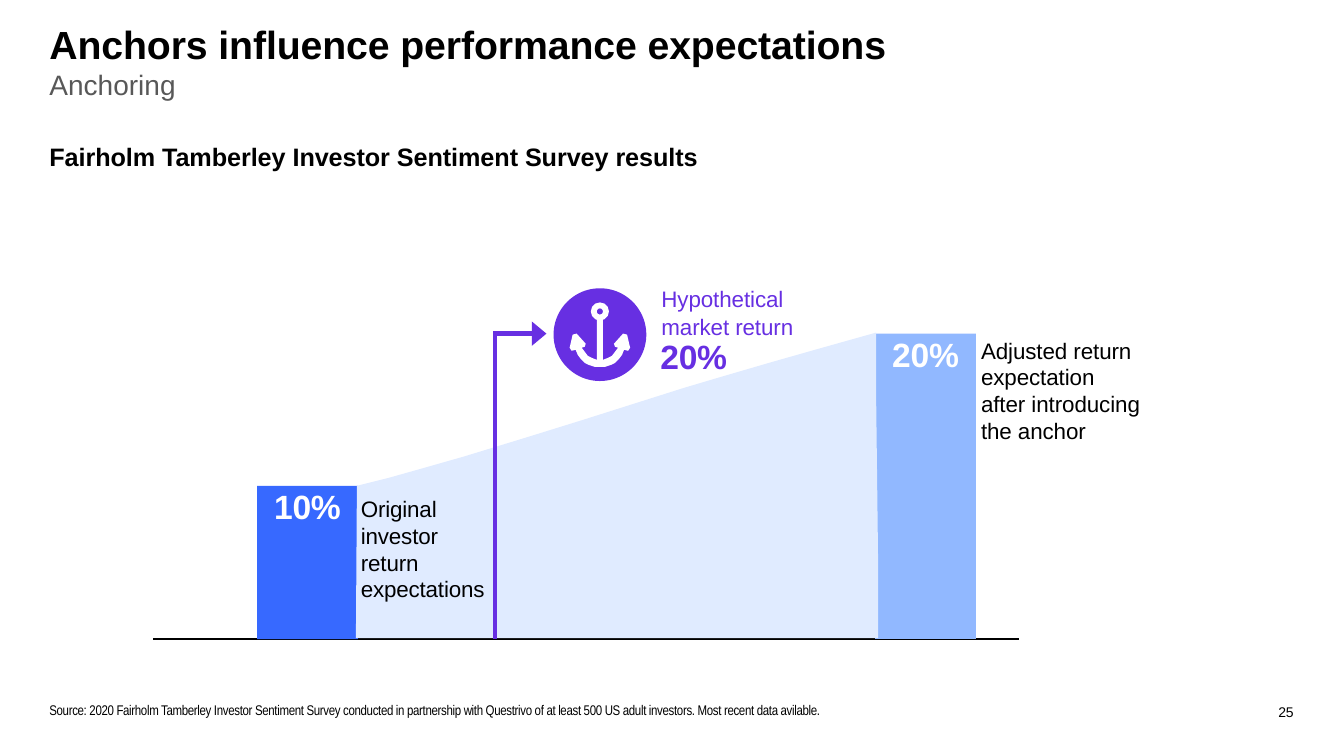
from dataclasses import dataclass

from lxml.etree import SubElement
from pptx import Presentation
from pptx.dml.color import RGBColor
from pptx.enum.shapes import MSO_CONNECTOR, MSO_SHAPE
from pptx.enum.text import MSO_ANCHOR, MSO_AUTO_SIZE, PP_ALIGN
from pptx.oxml.ns import qn
from pptx.util import Inches, Pt

BLACK, WHITE, GREY, PURPLE = "000000", "FFFFFF", "585858", "672FE2"
BASELINE = 6.34


@dataclass
class Bar:
    value: str
    left: float
    top: float
    color: str
    width: float = 1.0


@dataclass
class Label:
    lines: tuple[str, ...]
    left: float
    top: float
    width: float
    height: float
    size: float = 16
    color: str = BLACK
    bold: bool = False
    font: str = "Arial"
    tracking: float = 0
    line_spacing: float = 1.0


BARS = [
    Bar("20%", 8.68, 3.31, "91B8FF"),
    Bar("10%", 2.55, 4.82, "3769FF"),
]

LABELS = [
    Label(("Fairholm Tamberley Investor Sentiment Survey results",),
          0.49, 1.39, 6.6, 0.33, size=18, bold=True, tracking=-0.05),
    Label(("Adjusted return", "expectation", "after introducing", "the anchor"),
          9.73, 3.33, 1.75, 1.09, tracking=-0.07),
    Label(("Original", "investor", "return", "expectations"),
          3.58, 4.9, 1.32, 1.09, tracking=-0.1),
    Label(("Hypothetical", "market return"), 6.56, 2.81, 1.45, 0.57,
          color=PURPLE, tracking=-0.07, line_spacing=1.04),
    Label(("20%",), 6.55, 3.32, 0.8, 0.43, size=24, color=PURPLE,
          bold=True, tracking=-0.2),
    Label(("Source: 2020 Fairholm Tamberley Investor Sentiment Survey conducted in "
           "partnership with Questrivo of at least 500 US adult investors. "
           "Most recent data avilable.",),
          0.49, 6.95, 8.2, 0.19, size=10, font="Arial Narrow", tracking=-0.23),
    Label(("25",), 12.68, 6.97, 0.3, 0.19, size=10, tracking=-0.2),
]

# Upper edge of the rising band, from the first bar to the second
BAND_EDGE = [(3.54, 4.82), (3.86, 4.74), (4.18, 4.65), (4.6, 4.53), (5.19, 4.35),
             (5.77, 4.17), (6.78, 3.85), (7.15, 3.74), (7.63, 3.6), (8.05, 3.48),
             (8.37, 3.39), (8.69, 3.3)]
BAND = [(3.53, 6.33), *BAND_EDGE, (8.69, 3.95), (8.71, 5.64), (8.71, 6.33)]

# Left half of the anchor, from the shank down and around the fluke
ANCHOR_AXIS = 5.95
ANCHOR_HALF = [(5.92, 3.15), (5.92, 3.57), (5.87, 3.55), (5.83, 3.53), (5.8, 3.49),
               (5.77, 3.45), (5.8, 3.44), (5.81, 3.41), (5.72, 3.31), (5.68, 3.32),
               (5.65, 3.45), (5.67, 3.48), (5.71, 3.47), (5.73, 3.52), (5.76, 3.56),
               (5.8, 3.6), (5.84, 3.62), (5.9, 3.64)]
ANCHOR = ANCHOR_HALF + [(2 * ANCHOR_AXIS - x, y) for x, y in reversed(ANCHOR_HALF)]


def rgb(color: str) -> RGBColor:
    return RGBColor.from_string(color)


def paint(shape, color: str) -> None:
    shape.shadow.inherit = False
    shape.fill.solid()
    shape.fill.fore_color.rgb = rgb(color)
    shape.line.fill.background()


def set_frame(frame) -> None:
    frame.word_wrap = True
    frame.auto_size = MSO_AUTO_SIZE.NONE
    frame.vertical_anchor = MSO_ANCHOR.TOP
    frame.margin_left = frame.margin_right = frame.margin_bottom = 0
    frame.margin_top = Inches(0.01)


def write(paragraph, lines: tuple[str, ...], size: float, color: str,
          bold: bool = False, font: str = "Arial", tracking: float = 0) -> None:
    for index, line in enumerate(lines):
        if index:
            paragraph.add_line_break()
        run = paragraph.add_run()
        run.text = line
        if tracking:
            run._r.get_or_add_rPr().set("spc", str(round(tracking * 100)))
    paragraph.font.size = Pt(size)
    paragraph.font.name = font
    paragraph.font.bold = bold
    paragraph.font.color.rgb = rgb(color)


def add_shape(slide, kind, left: float, top: float, width: float, height: float,
              color: str):
    shape = slide.shapes.add_shape(kind, Inches(left), Inches(top),
                                   Inches(width), Inches(height))
    paint(shape, color)
    return shape


def add_outline(slide, points: list[tuple[float, float]], color: str) -> None:
    corners = [(Inches(x), Inches(y)) for x, y in points]
    builder = slide.shapes.build_freeform(*corners[0], scale=1.0)
    builder.add_line_segments(corners[1:], close=True)
    paint(builder.convert_to_shape(), color)


def add_line(slide, start: tuple[float, float], end: tuple[float, float],
             color: str, width: float, arrow: bool = False) -> None:
    line = slide.shapes.add_connector(MSO_CONNECTOR.STRAIGHT,
                                      *map(Inches, start), *map(Inches, end))
    line.line.color.rgb = rgb(color)
    line.line.width = Pt(width)
    if arrow:
        SubElement(line.line._get_or_add_ln(), qn("a:tailEnd"),
                   type="triangle", w="lg", len="med")
    SubElement(line._element.spPr, qn("a:effectLst"))


def add_bar(slide, bar: Bar) -> None:
    column = add_shape(slide, MSO_SHAPE.RECTANGLE, bar.left, bar.top, bar.width,
                       BASELINE - bar.top, bar.color)
    set_frame(column.text_frame)
    value = column.text_frame.paragraphs[0]
    value.alignment = PP_ALIGN.CENTER
    value.line_spacing = Pt(28.2)
    write(value, (bar.value,), 24, WHITE, bold=True, tracking=-0.2)


def add_label(slide, label: Label) -> None:
    box = slide.shapes.add_textbox(Inches(label.left), Inches(label.top),
                                   Inches(label.width), Inches(label.height))
    set_frame(box.text_frame)
    paragraph = box.text_frame.paragraphs[0]
    paragraph.line_spacing = label.line_spacing
    write(paragraph, label.lines, label.size, label.color, label.bold,
          label.font, label.tracking)


def add_heading(slide) -> None:
    heading = slide.shapes.title
    heading.left, heading.top = Inches(0.49), Inches(0.19)
    heading.width, heading.height = Inches(9), Inches(0.83)
    set_frame(heading.text_frame)
    title = heading.text_frame.paragraphs[0]
    subtitle = heading.text_frame.add_paragraph()
    for paragraph in (title, subtitle):
        paragraph.alignment = PP_ALIGN.LEFT
        paragraph.space_before = Pt(0)
    write(title, ("Anchors influence performance expectations",), 28, BLACK,
          bold=True, tracking=-0.05)
    write(subtitle, ("Anchoring",), 20, GREY)


def main() -> None:
    presentation = Presentation()
    presentation.slide_width, presentation.slide_height = Inches(13.33), Inches(7.5)
    slide = presentation.slides.add_slide(presentation.slide_layouts[5])
    add_heading(slide)

    # Bars, baseline and rising band
    add_line(slide, (1.52, BASELINE), (10.11, BASELINE), BLACK, 1)
    for bar in BARS:
        add_bar(slide, bar)
    add_outline(slide, BAND, "E0EBFF")

    # Bent arrow to the anchor
    add_line(slide, (4.91, BASELINE), (4.91, 3.31), PURPLE, 3.5)
    add_line(slide, (4.89, 3.31), (5.42, 3.31), PURPLE, 3.5, arrow=True)

    # Anchor badge
    add_shape(slide, MSO_SHAPE.OVAL, 5.49, 2.86, 0.92, 0.92, PURPLE)
    add_outline(slide, ANCHOR, WHITE)
    ring = add_shape(slide, MSO_SHAPE.DONUT, ANCHOR_AXIS - 0.09, 3, 0.18, 0.18, WHITE)
    ring.adjustments[0] = 0.33

    for label in LABELS:
        add_label(slide, label)
    presentation.save("out.pptx")


if __name__ == "__main__":
    main()
